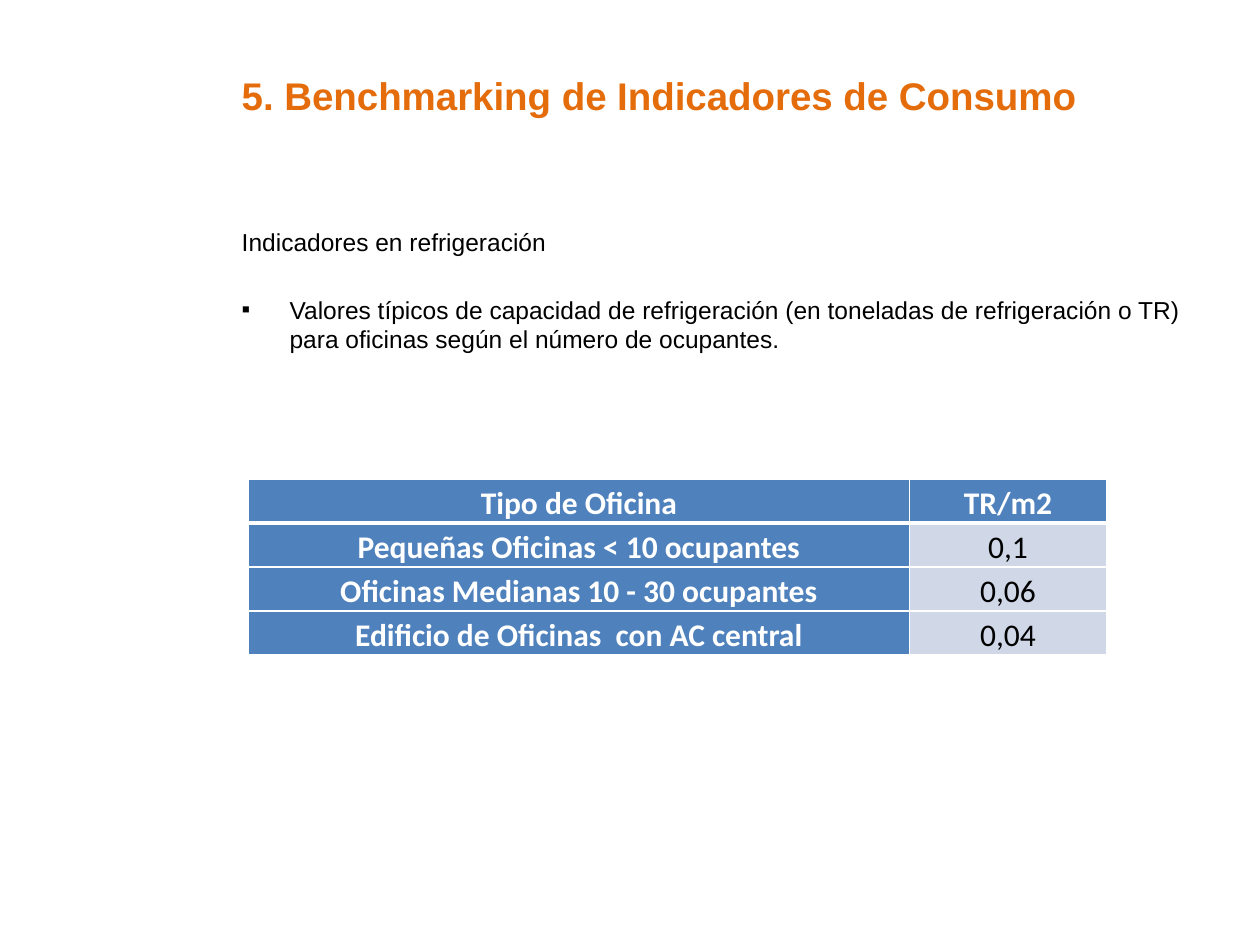
from dataclasses import dataclass
from typing import NamedTuple

from lxml import etree
from pptx import Presentation
from pptx.dml.color import RGBColor
from pptx.enum import text as txt
from pptx.oxml import ns
from pptx.util import Inches, Pt


@dataclass(frozen=True)
class Theme:
    orange: str = "E46C0A"
    black: str = "000000"
    white: str = "FFFFFF"
    blue: str = "4F81BD"
    pale: str = "D0D8E8"
    text_font: str = "Arial"
    table_font: str = "Calibri"
    title_size: int = 22
    body_size: int = 14
    table_size: int = 18


class OfficeRow(NamedTuple):
    kind: str
    ratio: str


THEME = Theme()
ROWS = [
    OfficeRow("Tipo de Oficina", "TR/m2"),
    OfficeRow("Pequeñas Oficinas < 10 ocupantes", "0,1"),
    OfficeRow("Oficinas Medianas 10 - 30 ocupantes", "0,06"),
    OfficeRow("Edificio de Oficinas  con AC central", "0,04"),
]


def write(paragraph, content: str, *, size: int, font: str = THEME.text_font,
          color: str = THEME.black, bold: bool = False, align=None,
          before: float = 0, spacing: float = 1.0, bullet: str = "",
          indent: float = 0) -> None:
    """Fill a paragraph with formatted text."""
    paragraph.alignment = align
    paragraph.space_before = Pt(before)
    paragraph.line_spacing = spacing
    if bullet:
        props = paragraph._p.get_or_add_pPr()
        props.set("marL", str(Inches(indent)))
        props.set("indent", str(-Inches(indent)))
        etree.SubElement(props, ns.qn("a:buFont")).set("typeface", font)
        etree.SubElement(props, ns.qn("a:buChar")).set("char", bullet)
    run = paragraph.add_run()
    run.text = content
    run.font.name = font
    run.font.size = Pt(size)
    run.font.bold = bold
    run.font.color.rgb = RGBColor.from_string(color)


def add_frame(slide, left: float, top: float, width: float, height: float):
    frame = slide.shapes.add_textbox(
        Inches(left), Inches(top), Inches(width), Inches(height)).text_frame
    frame.word_wrap = True
    return frame


def set_borders(cell, bottom: float) -> None:
    """Outline a cell in white; borders come before the fill in the XML."""
    props = cell._tc.get_or_add_tcPr()
    widths = {"a:lnL": 1, "a:lnR": 1, "a:lnT": 1, "a:lnB": bottom}
    for position, (tag, width) in enumerate(widths.items()):
        line = etree.Element(ns.qn(tag), w=str(Pt(width)))
        fill = etree.SubElement(line, ns.qn("a:solidFill"))
        etree.SubElement(fill, ns.qn("a:srgbClr"), val=THEME.white)
        props.insert(position, line)


def fill_cell(cell, content: str, heading: bool, bottom: float) -> None:
    cell.margin_left = cell.margin_right = Inches(0.07)
    cell.margin_top = cell.margin_bottom = 0
    cell.fill.solid()
    cell.fill.fore_color.rgb = RGBColor.from_string(
        THEME.blue if heading else THEME.pale)
    set_borders(cell, bottom)
    write(cell.text_frame.paragraphs[0], content, size=THEME.table_size,
          font=THEME.table_font, color=THEME.white if heading else THEME.black,
          bold=heading, align=txt.PP_ALIGN.CENTER, spacing=1.15)


def add_office_table(slide, rows: list[OfficeRow]) -> None:
    row_height = Inches(0.35)
    table = slide.shapes.add_table(
        len(rows), 2, Inches(1.97), Inches(3.8), Inches(6.81),
        row_height * len(rows)).table
    for column, width in zip(table.columns, (5.25, 1.56)):
        column.width = Inches(width)
    for r, row in enumerate(rows):
        table.rows[r].height = row_height
        for c, content in enumerate(row):
            fill_cell(table.cell(r, c), content, heading=r == 0 or c == 0,
                      bottom=3 if r == 0 else 1)
    # The first data row shares the thick line under the header
    for cell in table.rows[1].cells:
        cell._tc.tcPr.find(ns.qn("a:lnT")).set("w", str(Pt(3)))


def main() -> None:
    deck = Presentation()
    deck.slide_width, deck.slide_height = Inches(10), Inches(7.5)
    slide = deck.slides.add_slide(deck.slide_layouts[6])

    # Introduction
    body = add_frame(slide, 1.82, 1.75, 7.68, 4.95)
    write(body.paragraphs[0], "Indicadores en refrigeración",
          size=THEME.body_size)
    write(body.add_paragraph(),
          "Valores típicos de capacidad de refrigeración (en toneladas de "
          "refrigeración o TR) para oficinas según el número de ocupantes.",
          size=THEME.body_size, before=22, bullet="▪", indent=0.38)

    # Cooling capacity by office type
    add_office_table(slide, ROWS)

    # Title
    title = add_frame(slide, 1.82, 0.52, 7.19, 0.45)
    write(title.paragraphs[0], "5. Benchmarking de Indicadores de Consumo",
          size=THEME.title_size, color=THEME.orange, bold=True)

    deck.save("out.pptx")


if __name__ == "__main__":
    main()
